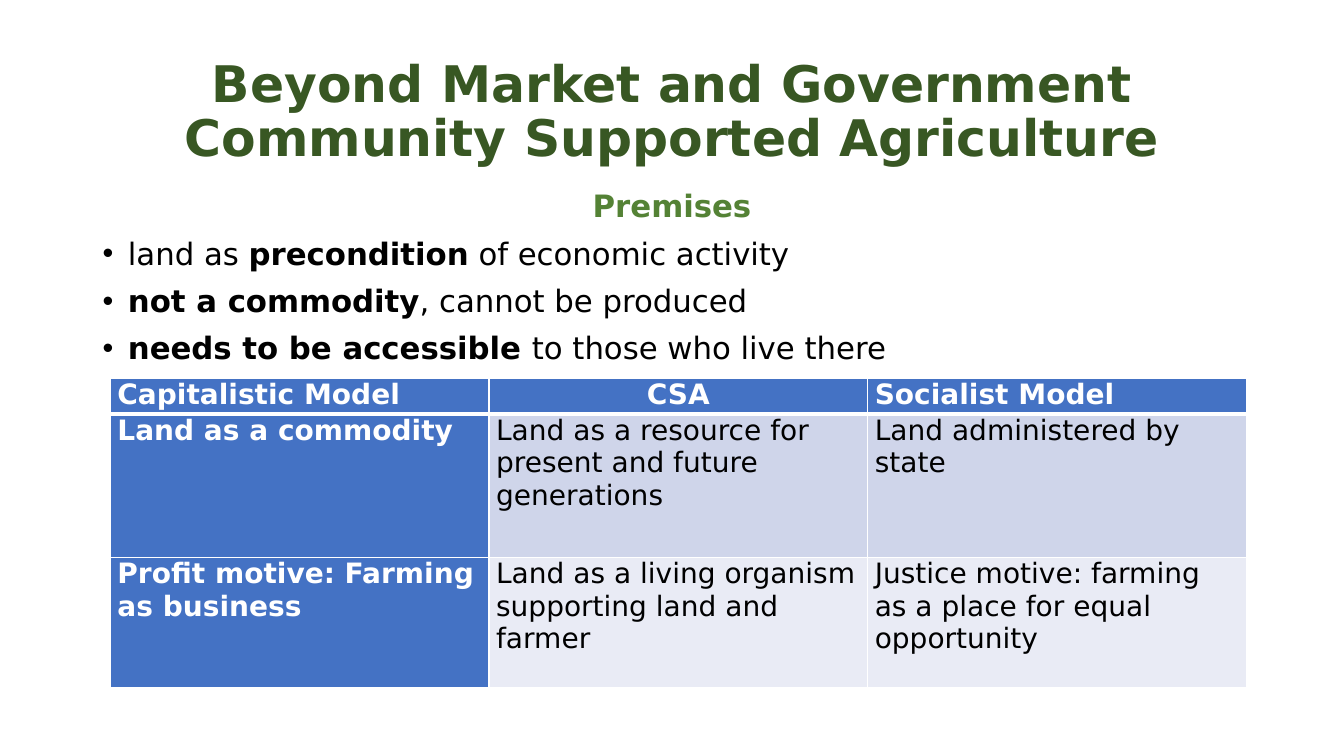
from dataclasses import dataclass

from lxml.etree import SubElement
from pptx import Presentation
from pptx.dml.color import RGBColor as Color
from pptx.enum.text import MSO_ANCHOR as Anchor, MSO_AUTO_SIZE as AutoSize, PP_ALIGN as Align
from pptx.oxml.ns import qn
from pptx.util import Cm, Pt


@dataclass(frozen=True)
class Theme:
    font: str = "DejaVu Sans"
    title_color: str = "385723"
    premise_color: str = "548235"
    text_color: str = "000000"
    white: str = "FFFFFF"
    accent: str = "4472C4"
    bands: tuple = ("CFD5EA", "E9EBF5")
    title_size: int = 36
    body_size: int = 22
    table_size: int = 20


THEME = Theme()

TITLE = "Beyond Market and Government\vCommunity Supported Agriculture"
HEADING = "Premises"
# Each premise is a list of (text, bold) pieces
PREMISES = [
    [("land as ", False), ("precondition", True), (" of economic activity", False)],
    [("not a commodity", True), (", cannot be produced", False)],
    [("needs to be accessible ", True), ("to those who live there", False)],
]
MODELS = [
    ["Capitalistic Model", "CSA", "Socialist Model"],
    ["Land as a commodity",
     "Land as a resource for\npresent and future generations",
     "Land administered by state"],
    ["Profit motive: Farming as business",
     "Land as a living organism\nsupporting land and farmer",
     "Justice motive: farming as a place for equal opportunity"],
]
ROW_HEIGHTS = (0.91, 3.61, 3.28)


def set_attributes(target, values):
    for name, value in values.items():
        setattr(target, name, value)


def place(shape, box):
    names = ("left", "top", "width", "height")
    set_attributes(shape, dict(zip(names, map(Cm, box))))


def format_runs(paragraph, size, color, bold):
    for run in paragraph.runs:
        set_attributes(run.font, {"name": THEME.font, "size": Pt(size), "bold": bold})
        run.font.color.rgb = Color.from_string(color)


# Title
def fill_title(title, box):
    place(title, box)
    frame = title.text_frame
    frame.text = TITLE
    set_attributes(frame, {"vertical_anchor": Anchor.MIDDLE, "auto_size": AutoSize.NONE})
    paragraph = frame.paragraphs[0]
    set_attributes(paragraph, {"alignment": Align.CENTER, "line_spacing": 0.9})
    format_runs(paragraph, THEME.title_size, THEME.title_color, True)


# Heading and bulleted premises
def set_bullet(paragraph, bullet, indent):
    properties = paragraph._p.get_or_add_pPr()
    properties.set("marL", str(Cm(indent)))
    properties.set("indent", str(-Cm(indent)))
    if bullet:
        SubElement(properties, qn("a:buFont"), typeface="Arial")
        SubElement(properties, qn("a:buChar"), char=bullet)
    else:
        SubElement(properties, qn("a:buNone"))


def fill_premises(body, box):
    place(body, box)
    frame = body.text_frame
    frame.auto_size = AutoSize.NONE
    spacing = {"line_spacing": 0.9, "space_before": Pt(10)}

    heading = frame.paragraphs[0]
    heading.text = HEADING
    set_attributes(heading, {"alignment": Align.CENTER, **spacing})
    set_bullet(heading, None, 0)
    format_runs(heading, THEME.body_size, THEME.premise_color, True)

    for pieces in PREMISES:
        paragraph = frame.add_paragraph()
        set_attributes(paragraph, spacing)
        set_bullet(paragraph, "•", 0.64)
        for text, bold in pieces:
            paragraph.add_run().text = text
        format_runs(paragraph, THEME.body_size, THEME.text_color, False)
        for run, (_, bold) in zip(paragraph.runs, pieces):
            run.font.bold = bold


# Comparison table
def set_borders(cell, widths):
    properties = cell._tc.get_or_add_tcPr()
    for side, width in widths.items():
        line = SubElement(properties, qn(f"a:ln{side}"), w=str(Pt(width)))
        fill = SubElement(line, qn("a:solidFill"))
        SubElement(fill, qn("a:srgbClr"), val=THEME.white)


def fill_cell(cell, text, row, column):
    is_header = row == 0
    is_accent = is_header or column == 0
    set_borders(cell, {"L": 1, "R": 1, "T": 3 if row == 1 else 1, "B": 3 if is_header else 1})
    cell.fill.solid()
    fill = THEME.accent if is_accent else THEME.bands[row - 1]
    cell.fill.fore_color.rgb = Color.from_string(fill)
    set_attributes(cell, {
        "margin_left": Cm(0.18), "margin_right": Cm(0.18),
        "margin_top": 0, "margin_bottom": 0, "vertical_anchor": Anchor.TOP,
    })
    cell.text_frame.text = text
    color = THEME.white if is_accent else THEME.text_color
    for paragraph in cell.text_frame.paragraphs:
        paragraph.alignment = Align.CENTER if is_header and column == 1 else Align.LEFT
        format_runs(paragraph, THEME.table_size, color, is_accent)


def add_models_table(slide, box):
    frame = slide.shapes.add_table(len(MODELS), len(MODELS[0]), *map(Cm, box))
    table = frame.table
    table.first_col = True
    for table_row, height in zip(table.rows, ROW_HEIGHTS):
        table_row.height = Cm(height)
    for row, texts in enumerate(MODELS):
        for column, text in enumerate(texts):
            fill_cell(table.cell(row, column), text, row, column)


def main():
    presentation = Presentation()
    set_attributes(presentation, {"slide_width": Cm(33.87), "slide_height": Cm(19.05)})
    slide = presentation.slides.add_slide(presentation.slide_layouts[1])
    title, body = slide.placeholders
    fill_title(title, (2.33, 1.01, 29.21, 3.68))
    fill_premises(body, (2.33, 4.69, 29.21, 14.35))
    add_models_table(slide, (2.78, 9.53, 28.63, sum(ROW_HEIGHTS)))
    presentation.save("out.pptx")


if __name__ == "__main__":
    main()
